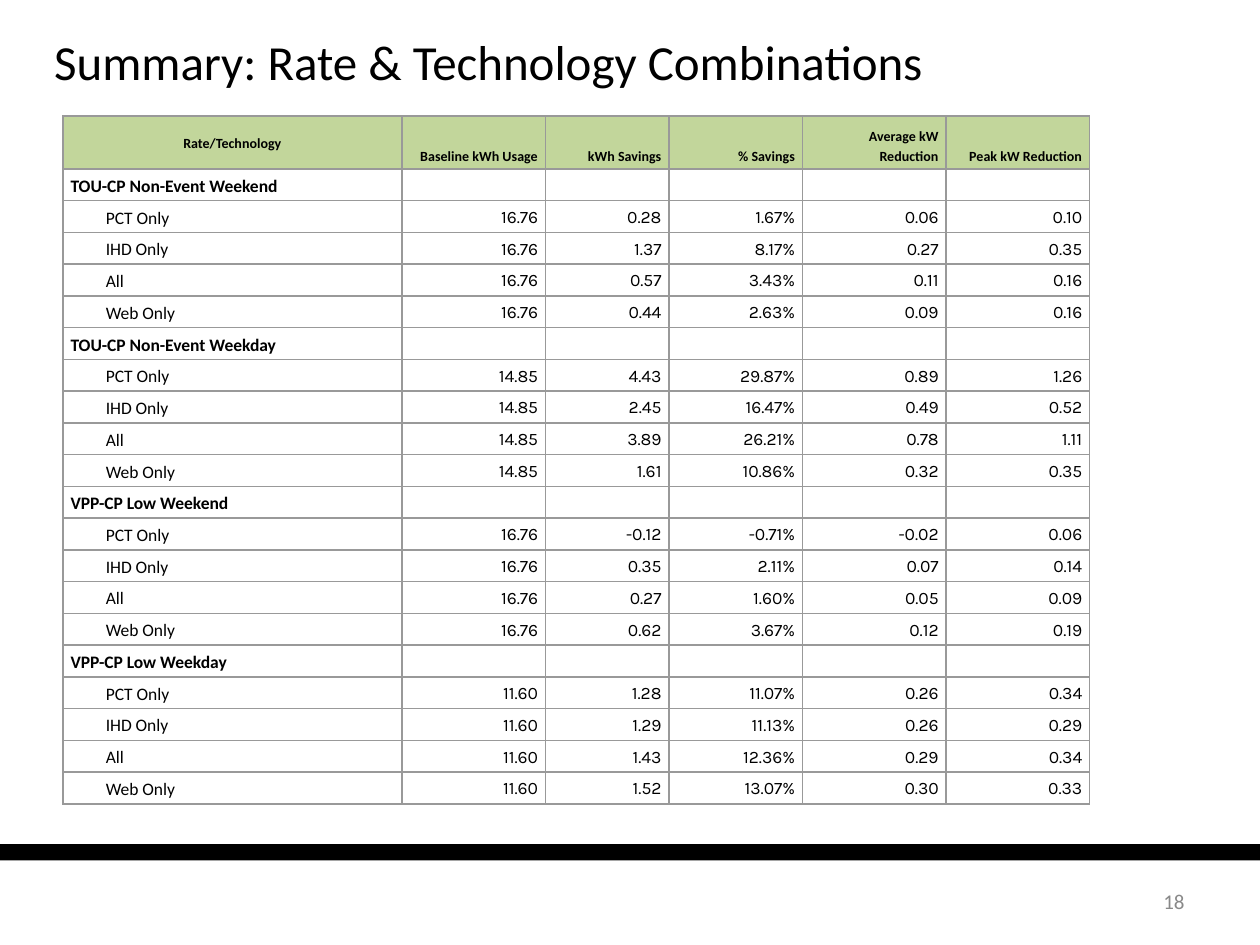
from lxml.etree import SubElement
from pptx import Presentation
from pptx.dml.color import RGBColor
from pptx.enum.shapes import MSO_SHAPE
from pptx.enum.text import MSO_ANCHOR, MSO_AUTO_SIZE, PP_ALIGN
from pptx.oxml.ns import qn
from pptx.util import Inches, Pt

HEADERS = ["Rate/Technology", "Baseline kWh Usage", "kWh Savings",
           "% Savings", "Average kW Reduction", "Peak kW Reduction"]
TECHNOLOGIES = ["PCT Only", "IHD Only", "All", "Web Only"]
# Each rate: baseline usage, then one line of results per technology
RATES = {
    "TOU-CP Non-Event Weekend": ("16.76", [
        "0.28 1.67% 0.06 0.10", "1.37 8.17% 0.27 0.35",
        "0.57 3.43% 0.11 0.16", "0.44 2.63% 0.09 0.16"]),
    "TOU-CP Non-Event Weekday": ("14.85", [
        "4.43 29.87% 0.89 1.26", "2.45 16.47% 0.49 0.52",
        "3.89 26.21% 0.78 1.11", "1.61 10.86% 0.32 0.35"]),
    "VPP-CP Low Weekend": ("16.76", [
        "-0.12 -0.71% -0.02 0.06", "0.35 2.11% 0.07 0.14",
        "0.27 1.60% 0.05 0.09", "0.62 3.67% 0.12 0.19"]),
    "VPP-CP Low Weekday": ("11.60", [
        "1.28 11.07% 0.26 0.34", "1.29 11.13% 0.26 0.29",
        "1.43 12.36% 0.29 0.34", "1.52 13.07% 0.30 0.33"]),
}
COLUMN_WIDTHS = [2.69, 1.14, 0.98, 1.06, 1.14, 1.14]
HEADER_HEIGHT, ROW_HEIGHT = 0.42, 0.25


def color(value):
    return RGBColor.from_string(value)


def apply(target, values):
    for name, value in values.items():
        setattr(target, name, value)


class SlideBuilder:
    font = "Calibri"
    number_font = "Karla"
    black, gray, border, header_fill = "000000", "898989", "999999", "C2D69B"

    def __init__(self, page):
        self.page = page

    def add_span(self, para, text, size, shade=None, bold=False, font=None):
        span = para.add_run()
        span.text = text
        apply(span.font, {"name": font or self.font, "size": Pt(size), "bold": bold})
        span.font.color.rgb = color(shade or self.black)

    def title(self, text, left, top, width, height):
        box = self.page.shapes.title
        apply(box, {"left": Inches(left), "top": Inches(top),
                    "width": Inches(width), "height": Inches(height)})
        apply(box.text_frame, {"margin_left": 0, "margin_right": 0, "margin_top": 0,
                               "margin_bottom": 0, "word_wrap": True,
                               "auto_size": MSO_AUTO_SIZE.NONE,
                               "vertical_anchor": MSO_ANCHOR.MIDDLE})
        para = box.text_frame.paragraphs[0]
        para.alignment = PP_ALIGN.LEFT
        self.add_span(para, text, 28)

    def bar(self, left, top, width, height):
        bar = self.page.shapes.add_shape(
            MSO_SHAPE.RECTANGLE, Inches(left), Inches(top), Inches(width), Inches(height))
        bar.shadow.inherit = False
        bar.fill.solid()
        bar.fill.fore_color.rgb = color(self.black)
        bar.line.fill.background()

    def page_number(self, text, left, top, width, height):
        box = self.page.shapes.add_textbox(
            Inches(left), Inches(top), Inches(width), Inches(height))
        apply(box.text_frame, {"word_wrap": True, "vertical_anchor": MSO_ANCHOR.MIDDLE})
        para = box.text_frame.paragraphs[0]
        para.alignment = PP_ALIGN.RIGHT
        self.add_span(para, text, 12, self.gray)

    def cell(self, cell, text="", size=10, align=PP_ALIGN.LEFT, anchor=MSO_ANCHOR.BOTTOM,
             fill=None, indent=0, after=0, **style):
        apply(cell, {"margin_left": Inches(0.06), "margin_right": Inches(0.06),
                     "margin_top": Inches(0.03), "margin_bottom": Inches(0.03),
                     "vertical_anchor": anchor})
        para = cell.text_frame.paragraphs[0]
        apply(para, {"alignment": align, "line_spacing": 1.15, "space_after": Pt(after)})
        if indent:
            properties = para._p.get_or_add_pPr()
            properties.set("marL", "0")
            properties.set("indent", str(Inches(indent)))
        if text:
            self.add_span(para, text, size, **style)
        else:
            # Keeps an empty cell from growing its row
            SubElement(para._p, qn("a:endParaRPr"), sz=str(size * 100))
        self.borders(cell)
        if fill:
            cell.fill.solid()
            cell.fill.fore_color.rgb = color(fill)
        else:
            cell.fill.background()

    def borders(self, cell):
        properties = cell._tc.get_or_add_tcPr()
        for side in ("a:lnL", "a:lnR", "a:lnT", "a:lnB"):
            line = SubElement(properties, qn(side), w=str(Pt(1)))
            SubElement(SubElement(line, qn("a:solidFill")), qn("a:srgbClr"), val=self.border)

    def savings_table(self, left, top):
        row_count = 1 + len(RATES) * (1 + len(TECHNOLOGIES))
        height = HEADER_HEIGHT + ROW_HEIGHT * (row_count - 1)
        table = self.page.shapes.add_table(
            row_count, len(HEADERS), Inches(left), Inches(top),
            Inches(sum(COLUMN_WIDTHS)), Inches(height)).table
        apply(table, {"first_row": False, "horz_banding": False})
        for column, width in zip(table.columns, COLUMN_WIDTHS):
            column.width = Inches(width)
        for index, row in enumerate(table.rows):
            row.height = Inches(ROW_HEIGHT if index else HEADER_HEIGHT)
        rows = iter(table.rows)

        # Header row
        first, *others = next(rows).cells
        header = {"size": 8, "bold": True, "fill": self.header_fill}
        self.cell(first, HEADERS[0], align=PP_ALIGN.CENTER,
                  anchor=MSO_ANCHOR.MIDDLE, after=2, **header)
        for cell, text in zip(others, HEADERS[1:]):
            self.cell(cell, text, align=PP_ALIGN.RIGHT, **header)

        # One group of rows per rate
        for rate, (baseline, results) in RATES.items():
            first, *others = next(rows).cells
            self.cell(first, rate, bold=True)
            for cell in others:
                self.cell(cell)
            for technology, result in zip(TECHNOLOGIES, results):
                first, *others = next(rows).cells
                self.cell(first, technology, indent=0.28)
                for cell, value in zip(others, [baseline, *result.split()]):
                    self.cell(cell, value, align=PP_ALIGN.RIGHT,
                              anchor=MSO_ANCHOR.TOP, font=self.number_font)


def main():
    deck = Presentation()
    apply(deck, {"slide_width": Inches(10), "slide_height": Inches(7.5)})
    builder = SlideBuilder(deck.slides.add_slide(deck.slide_layouts[5]))
    builder.bar(-0.03, 6.7, 10.04, 0.13)
    builder.page_number("18", 7.17, 6.95, 2.33, 0.4)
    builder.title("Summary: Rate & Technology Combinations", 0.43, 0.17, 8.24, 0.62)
    builder.savings_table(0.5, 0.92)
    deck.save("out.pptx")


if __name__ == "__main__":
    main()
